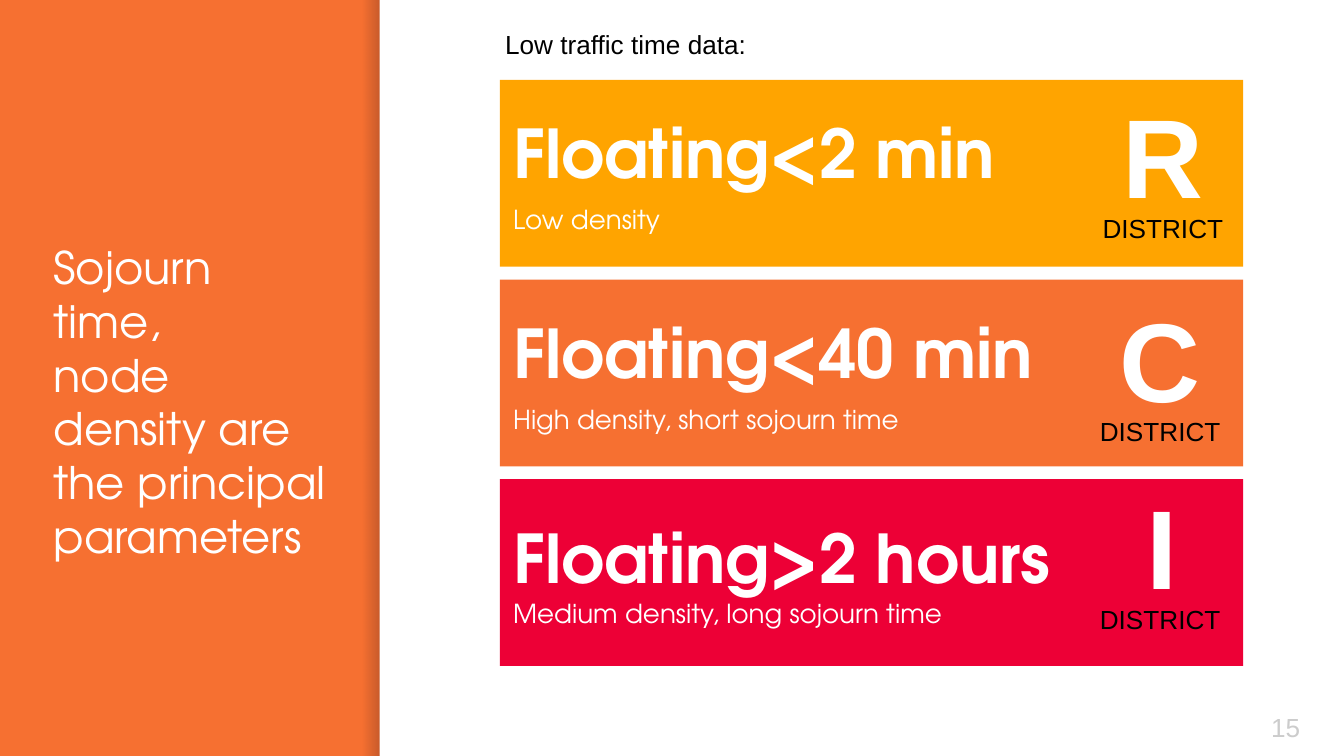
from dataclasses import dataclass

from lxml.etree import SubElement
from pptx import Presentation
from pptx.dml.color import RGBColor
from pptx.enum.shapes import MSO_SHAPE
from pptx.enum.text import MSO_ANCHOR, MSO_AUTO_SIZE, PP_ALIGN
from pptx.oxml.ns import qn
from pptx.shapes.autoshape import Shape
from pptx.slide import Slide
from pptx.text.text import Font, TextFrame
from pptx.util import Emu, Pt

EMU_PER_PX = 4572
WIDTH, HEIGHT = 2000, 1125
SIDEBAR_WIDTH, SHADE_WIDTH = 565, 25
BAND_TOP, BAND_PITCH = 119, 297
MARGIN = 20
ORANGE, WHITE, BLACK, GREY, SHADE = "F67031", "FFFFFF", "000000", "CCCCCC", "000014"
DISPLAY, BODY = "TeX Gyre Adventor", "Arial"


@dataclass(frozen=True)
class Box:
    left: int
    top: int
    width: int
    height: int

    def emu(self) -> list[Emu]:
        return [Emu(px * EMU_PER_PX) for px in (self.left, self.top, self.width, self.height)]


@dataclass(frozen=True)
class Band:
    heading: str
    separator: str
    detail: str
    color: str
    letter: str
    letter_box: Box
    district_box: Box


BANDS = [
    Band("Floating<2 min", "\n", "Low density", "FFA400",
         "R", Box(1650, 119, 162, 222), Box(1621, 306, 222, 68)),
    Band("Floating<40 min", "\n", "High density, short sojourn time", ORANGE,
         "C", Box(1646, 422, 162, 222), Box(1617, 608, 222, 68)),
    Band("Floating>2 hours", "\v", "Medium density, long sojourn time", "ED0036",
         "I", Box(1686, 700, 88, 222), Box(1617, 888, 222, 68)),
]


def rgb(color: str) -> RGBColor:
    return RGBColor.from_string(color)


def style(font: Font, size: int, name: str, color: str, bold: bool = False) -> None:
    font.size, font.name, font.bold = Pt(size), name, bold
    font.color.rgb = rgb(color)


def lay_out(frame: TextFrame, anchor: MSO_ANCHOR) -> None:
    margin = Emu(MARGIN * EMU_PER_PX)
    frame.margin_left = frame.margin_right = margin
    frame.margin_top = frame.margin_bottom = margin
    frame.word_wrap = True
    frame.vertical_anchor = anchor


def add_rectangle(slide: Slide, box: Box) -> Shape:
    rectangle = slide.shapes.add_shape(MSO_SHAPE.RECTANGLE, *box.emu())
    rectangle.shadow.inherit = False
    rectangle.line.fill.background()
    return rectangle


def add_panel(slide: Slide, box: Box, color: str) -> Shape:
    panel = add_rectangle(slide, box)
    panel.fill.solid()
    panel.fill.fore_color.rgb = rgb(color)
    return panel


def add_edge_shade(slide: Slide, box: Box) -> None:
    shade = add_rectangle(slide, box)
    shade.fill.gradient()
    shade.fill.gradient_angle = 0
    for stop in shade.fill.gradient_stops:
        stop.color.rgb = rgb(SHADE)
    for stop_color, opacity in zip(shade._element.spPr.iter(qn("a:srgbClr")), (0, 20)):
        SubElement(stop_color, qn("a:alpha")).set("val", str(opacity * 1000))


def add_label(slide: Slide, box: Box, text: str, size: int, color: str,
              bold: bool = False) -> None:
    frame = slide.shapes.add_textbox(*box.emu()).text_frame
    frame.word_wrap = False
    frame.auto_size = MSO_AUTO_SIZE.SHAPE_TO_FIT_TEXT
    frame.text = text
    style(frame.paragraphs[0].runs[0].font, size, BODY, color, bold)


def add_block(slide: Slide, box: Box, text: str, size: int, name: str, color: str,
              anchor: MSO_ANCHOR) -> None:
    frame = slide.shapes.add_textbox(*box.emu()).text_frame
    lay_out(frame, anchor)
    frame.text = text
    for run in frame.paragraphs[0].runs:
        style(run.font, size, name, color)


def add_band(slide: Slide, band: Band, top: int) -> None:
    frame = add_panel(slide, Box(744, top, 1106, 278), band.color).text_frame
    lay_out(frame, MSO_ANCHOR.MIDDLE)
    frame.text = band.heading + band.separator + band.detail
    for paragraph in frame.paragraphs:
        paragraph.alignment = PP_ALIGN.LEFT
    for paragraph in frame.paragraphs[1:]:
        paragraph.space_before = Pt(6)
    heading, detail = [run for paragraph in frame.paragraphs for run in paragraph.runs]
    style(heading.font, 36, DISPLAY, WHITE, True)
    style(detail.font, 14, DISPLAY, WHITE)


def main() -> None:
    """Build the slide on sojourn time and node density by district."""
    deck = Presentation()
    deck.slide_width, deck.slide_height = Emu(WIDTH * EMU_PER_PX), Emu(HEIGHT * EMU_PER_PX)
    slide = deck.slides.add_slide(deck.slide_layouts[6])
    slide.background.fill.solid()
    slide.background.fill.fore_color.rgb = rgb(ORANGE)

    add_edge_shade(slide, Box(SIDEBAR_WIDTH - SHADE_WIDTH, 0, SHADE_WIDTH, HEIGHT))
    add_panel(slide, Box(SIDEBAR_WIDTH, 0, WIDTH - SIDEBAR_WIDTH, HEIGHT), WHITE)
    add_block(slide, Box(1872, 1039, 120, 86), "15", 14, BODY, GREY, MSO_ANCHOR.MIDDLE)
    add_block(slide, Box(60, 337, 448, 492),
              "Sojourn time,\vnode density are the principal parameters",
              24, DISPLAY, WHITE, MSO_ANCHOR.TOP)
    for row, band in enumerate(BANDS):
        add_band(slide, band, BAND_TOP + row * BAND_PITCH)
    for band in BANDS:
        add_label(slide, band.letter_box, band.letter, 60, WHITE, True)
        add_label(slide, band.district_box, "DISTRICT", 14, BLACK)
    add_label(slide, Box(732, 32, 402, 68), "Low traffic time data:", 14, BLACK)
    deck.save("out.pptx")


if __name__ == "__main__":
    main()
